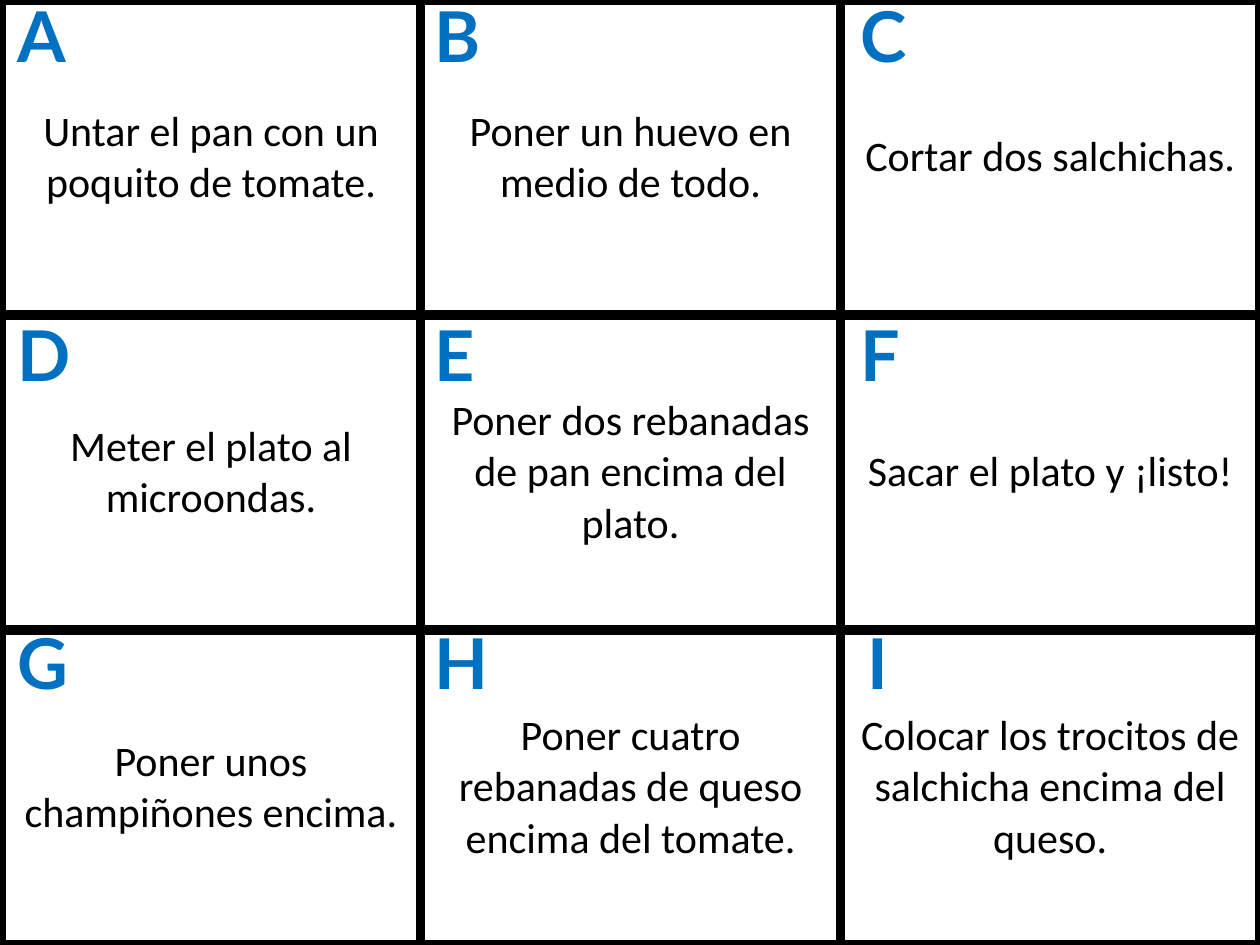
import lxml.etree
import pptx
import pptx.dml.color
import pptx.enum.text
import pptx.oxml.ns
import pptx.util

THEME = {
    "step_font": "Calibri",
    "step_size": pptx.util.Pt(24),
    "step_color": pptx.dml.color.RGBColor.from_string("000000"),
    "letter_font": "Lato",
    "letter_size": pptx.util.Pt(40),
    "letter_color": pptx.dml.color.RGBColor.from_string("0070C0"),
    "border_color": "000000",
    "border_width": pptx.util.Pt(6),
}

STEPS = [
    ["Untar el pan con un poquito de tomate.",
     "Poner un huevo en medio de todo.",
     "Cortar dos salchichas."],
    ["Meter el plato al microondas.",
     "Poner dos rebanadas de pan encima del plato.",
     "Sacar el plato y ¡listo!"],
    ["Poner unos champiñones encima.",
     "Poner cuatro rebanadas de queso encima del tomate.",
     "Colocar los trocitos de salchicha encima del queso."],
]
LETTERS = ["ABC", "DEF", "GHI"]
LETTER_LEFTS = [0.04, 3.35, 6.73]
LETTER_TOPS = [-0.11, 2.42, 4.87]


def write_centered(text_frame, text, role, bold):
    paragraph = text_frame.paragraphs[0]
    paragraph.alignment = pptx.enum.text.PP_ALIGN.CENTER
    run = paragraph.add_run()
    run.text = text
    run.font.name = THEME[role + "_font"]
    run.font.size = THEME[role + "_size"]
    run.font.color.rgb = THEME[role + "_color"]
    run.font.bold = bold


def add_borders(cell):
    """Draw all four sides; the schema wants them ahead of the cell's fill."""
    properties = cell._tc.get_or_add_tcPr()
    for position, side in enumerate(["lnL", "lnR", "lnT", "lnB"]):
        line = lxml.etree.Element(pptx.oxml.ns.qn("a:" + side), w=str(THEME["border_width"]))
        fill = lxml.etree.SubElement(line, pptx.oxml.ns.qn("a:solidFill"))
        lxml.etree.SubElement(fill, pptx.oxml.ns.qn("a:srgbClr"), val=THEME["border_color"])
        properties.insert(position, line)


deck = pptx.Presentation()
deck.slide_width = pptx.util.Inches(10)
deck.slide_height = pptx.util.Inches(7.5)
slide = deck.slides.add_slide(deck.slide_layouts[6])

row_count, column_count = len(STEPS), len(STEPS[0])
grid_left = pptx.util.Inches(0.01)
column_width = (deck.slide_width - grid_left) // column_count
row_height = deck.slide_height // row_count

cards = slide.shapes.add_table(
    row_count, column_count, grid_left, 0,
    column_width * column_count, row_height * row_count,
).table
cards.first_row = False
cards.horz_banding = False

for row, row_steps in enumerate(STEPS):
    for column, step in enumerate(row_steps):
        card = cards.cell(row, column)
        card.fill.background()
        card.vertical_anchor = pptx.enum.text.MSO_ANCHOR.MIDDLE
        write_centered(card.text_frame, step, "step", False)
        add_borders(card)

for top, row_letters in zip(LETTER_TOPS, LETTERS):
    for left, letter in zip(LETTER_LEFTS, row_letters):
        label = slide.shapes.add_textbox(
            pptx.util.Inches(left), pptx.util.Inches(top),
            pptx.util.Inches(0.47), pptx.util.Inches(0.77),
        ).text_frame
        label.word_wrap = True
        label.auto_size = pptx.enum.text.MSO_AUTO_SIZE.SHAPE_TO_FIT_TEXT
        write_centered(label, letter, "letter", True)

deck.save("out.pptx")
